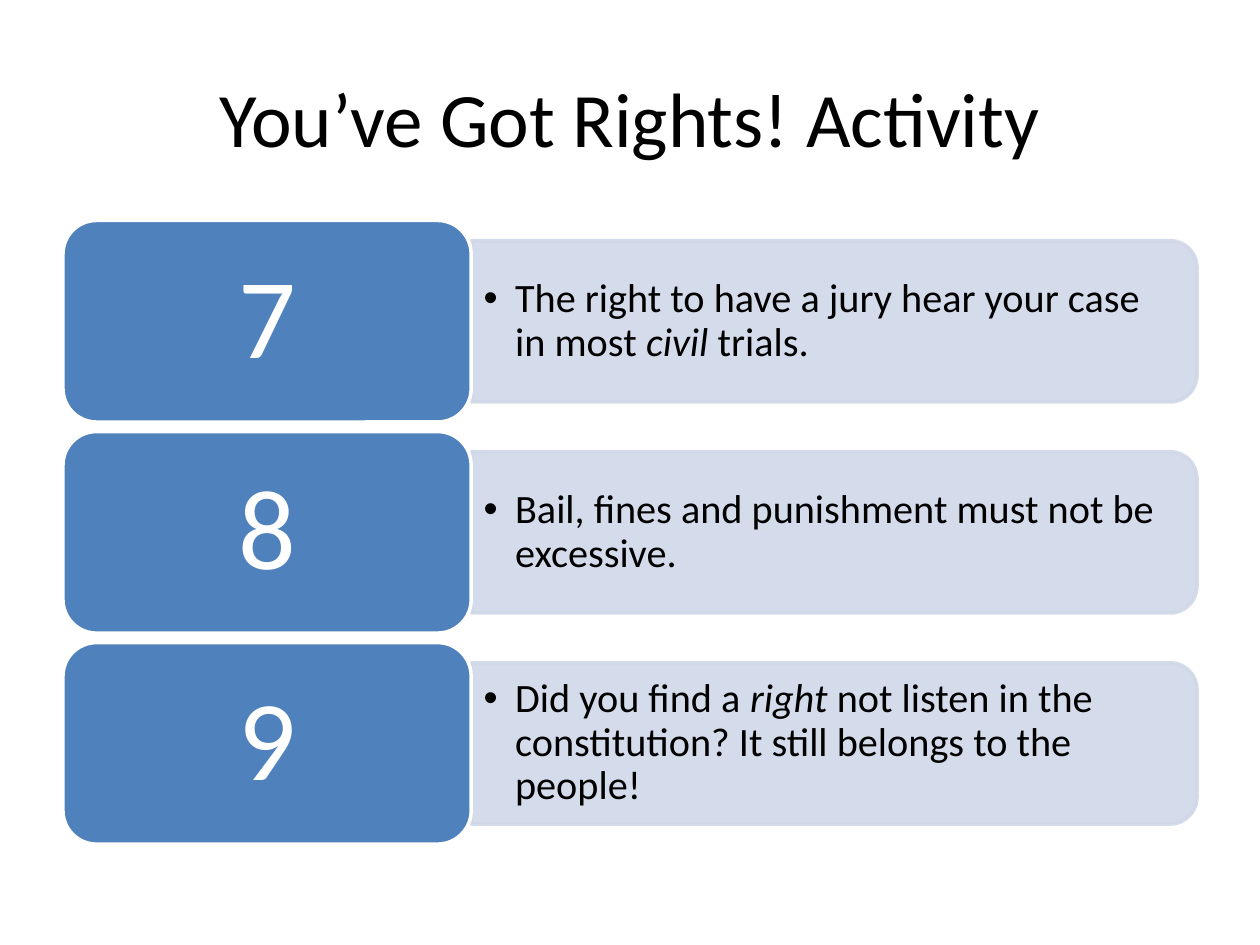
from lxml.etree import SubElement
from pptx import Presentation
from pptx.dml.color import RGBColor
from pptx.enum.shapes import MSO_SHAPE as Shape
from pptx.enum.text import MSO_ANCHOR as Anchor, PP_ALIGN as Align
from pptx.oxml.ns import qn
from pptx.util import Inches, Pt

TITLE = "You’ve Got Rights! Activity"
RIGHTS = [
    ("7", [("The right to have a jury hear your case in most ", False),
           ("civil", True), (" trials.", False)]),
    ("8", [("Bail, fines and punishment must not be excessive.", False)]),
    ("9", [("Did you find a ", False), ("right ", True),
           ("not listen in the constitution? It still belongs to the people!", False)]),
]
THEME = {
    "font": "Calibri", "title": 44, "number": 65, "detail": 23,
    "text": "000000", "number_text": "FFFFFF",
    "tile": "4F81BD", "tile_line": "FFFFFF", "panel": "D0D8E8",
    "panel_alpha": 90, "line": 2, "spacing": 0.9,
}
LEFT, TOP, PITCH = 0.5, 1.75, 1.675
TILE_W, TILE_H, TILE_PAD = 3.24, 1.6, 0.08
PANEL_W, PANEL_H = 5.76, 1.28
DETAIL_W, DETAIL_H = 5.7, 1.15


def set_alpha(fill_parent):
    for color in fill_parent.findall(qn("a:solidFill") + "/" + qn("a:srgbClr")):
        SubElement(color, qn("a:alpha"), val=str(THEME["panel_alpha"] * 1000))


def add_block(page, kind, left, top, width, height, fill, line):
    block = page.shapes.add_shape(
        kind, Inches(left), Inches(top), Inches(width), Inches(height))
    block.shadow.inherit = False
    block.fill.solid()
    block.fill.fore_color.rgb = RGBColor.from_string(fill)
    block.line.color.rgb = RGBColor.from_string(line)
    block.line.width = Pt(THEME["line"])
    return block


def add_text(page, area, spans, size, color, inset=(0.1, 0.05), align=Align.CENTER):
    box = page.shapes.add_textbox(*[Inches(value) for value in area])
    frame = box.text_frame
    frame.word_wrap = True
    frame.vertical_anchor = Anchor.MIDDLE
    frame.margin_left = frame.margin_right = Inches(inset[0])
    frame.margin_top = frame.margin_bottom = Inches(inset[1])
    para = frame.paragraphs[0]
    para.alignment = align
    for text, italic in spans:
        span = para.add_run()
        span.text = text
        span.font.name = THEME["font"]
        span.font.size = Pt(THEME[size])
        span.font.italic = italic
        span.font.color.rgb = RGBColor.from_string(THEME[color])
    return para


def add_bullet(para):
    props = para._p.get_or_add_pPr()
    props.set("marL", str(Inches(0.25)))
    props.set("indent", str(-Inches(0.25)))
    SubElement(props, qn("a:buFont"), typeface="Arial")
    SubElement(props, qn("a:buChar"), char="•")


def add_right(page, top, number, detail):
    middle = top + TILE_H / 2
    panel_left = LEFT + TILE_W

    panel = add_block(page, Shape.ROUND_2_SAME_RECTANGLE,
                      panel_left + (PANEL_W - PANEL_H) / 2, middle - PANEL_W / 2,
                      PANEL_H, PANEL_W, THEME["panel"], THEME["panel"])
    panel.rotation = 90
    props = panel._element.spPr
    set_alpha(props)
    set_alpha(props.find(qn("a:ln")))

    para = add_text(page, (panel_left, middle - DETAIL_H / 2, DETAIL_W, DETAIL_H),
                    detail, "detail", "text", align=Align.LEFT)
    para.line_spacing = THEME["spacing"]
    add_bullet(para)

    add_block(page, Shape.ROUNDED_RECTANGLE, LEFT, top, TILE_W, TILE_H,
              THEME["tile"], THEME["tile_line"])
    para = add_text(page, (LEFT + TILE_PAD, top + TILE_PAD,
                           TILE_W - 2 * TILE_PAD, TILE_H - 2 * TILE_PAD),
                    [(number, False)], "number", "number_text", inset=(0.27, 0.14))
    para.line_spacing = THEME["spacing"]


def main():
    deck = Presentation()
    deck.slide_width, deck.slide_height = Inches(10), Inches(7.5)
    page = deck.slides.add_slide(deck.slide_layouts[6])
    add_text(page, (0.5, 0.3, 9, 1.25), [(TITLE, False)], "title", "text")
    for row, (number, detail) in enumerate(RIGHTS):
        add_right(page, TOP + row * PITCH, number, detail)
    deck.save("out.pptx")


if __name__ == "__main__":
    main()
